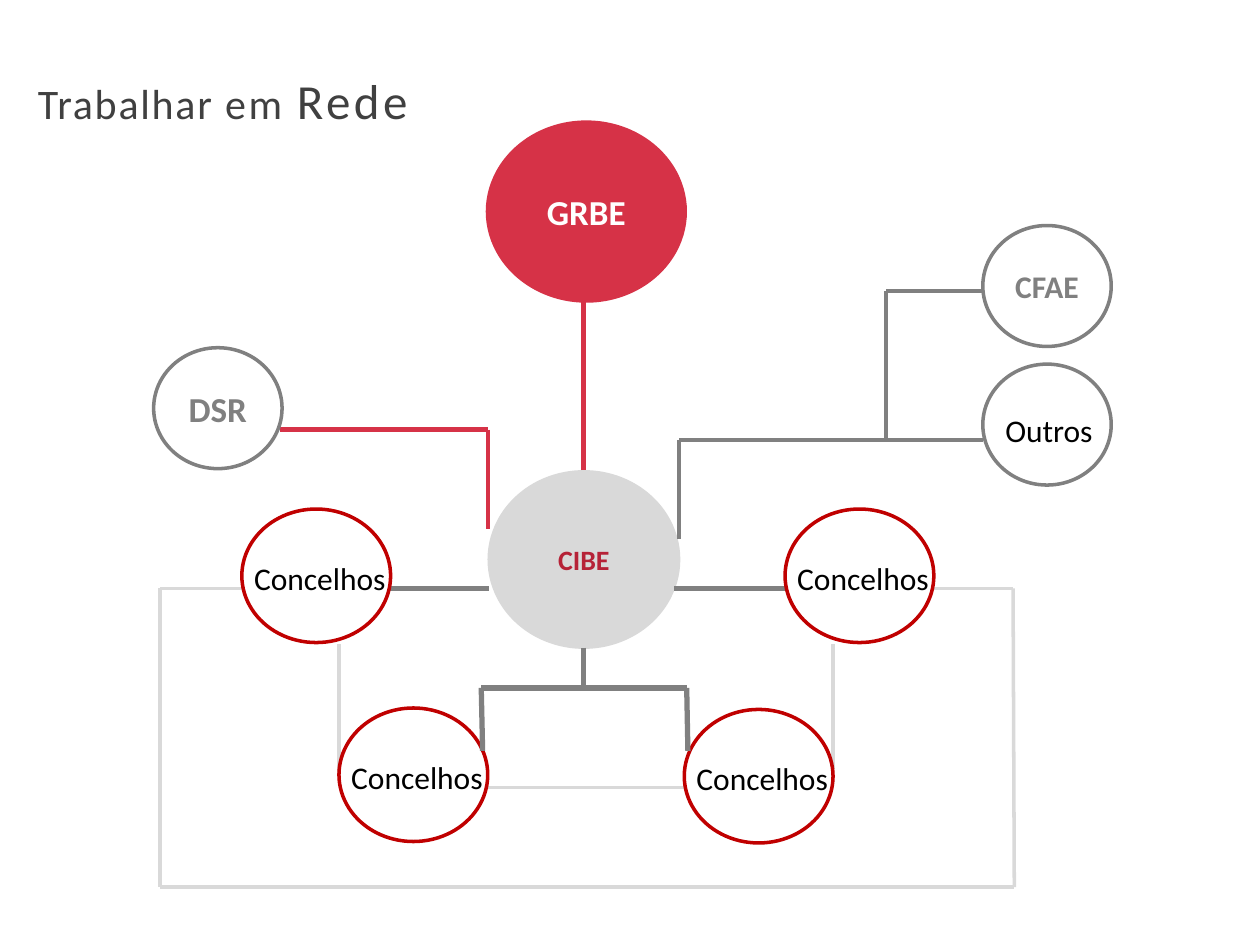
from dataclasses import dataclass
from itertools import pairwise
from typing import Optional

from lxml.etree import SubElement
from pptx import Presentation
from pptx.dml.color import RGBColor
from pptx.enum.shapes import MSO_CONNECTOR, MSO_SHAPE
from pptx.enum.text import MSO_ANCHOR, PP_ALIGN
from pptx.oxml.ns import qn
from pptx.util import Pt

COLORS = {
    "red": "D63247", "dark_red": "B62237", "ring_red": "C00000",
    "gray": "808080", "light": "D9D9D9", "title": "404040",
    "black": "000000", "white": "FFFFFF",
}
FONT = "Calibri"
SMALL = (73.4, 69.1)
COUNCIL = (85, 76.3)


@dataclass(frozen=True)
class Node:
    text: str
    left: float
    top: float
    size: tuple[float, float]
    text_color: str
    text_size: float
    fill: Optional[str] = None
    ring: Optional[str] = None


@dataclass(frozen=True)
class LabeledNode:
    """A ring whose caption is a separate text box, offset from the ring."""
    ring: Node
    offset: tuple[float, float]
    label_width: float


@dataclass(frozen=True)
class Wire:
    color: str
    width: float
    points: tuple[tuple[float, float], ...]


def council(left: float, top: float) -> LabeledNode:
    ring = Node("Concelhos", left, top, COUNCIL, "black", 18, ring="ring_red")
    return LabeledNode(ring, (-5.8, 25), 100.8)


HUBS = (
    Node("CIBE", 278.6, 268.6, (110.2, 102.2), "dark_red", 16, fill="light"),
    Node("GRBE", 278.6, 69.8, (113, 102.2), "white", 20, fill="red", ring="red"),
)
PARTNERS = (
    Node("CFAE", 561.6, 128.9, SMALL, "gray", 18, ring="gray"),
    Node("DSR", 87.8, 198.7, SMALL, "gray", 20, ring="gray"),
)
LABELED_NODES = (
    council(193.7, 404.6),
    council(391, 405.4),
    council(448.6, 290.9),
    council(138.2, 290.9),
    LabeledNode(Node("Outros", 561.6, 208.1, SMALL, "black", 18, ring="gray"),
                (0, 23), 75.6),
)
BACK_WIRES = (
    Wire("gray", 3, ((333.4, 370.1), (333.4, 393.1))),
    Wire("light", 2, ((391, 450), (277.2, 450))),
    Wire("light", 2, ((475.9, 439.2), (475.9, 367.9))),
    Wire("light", 2, ((193.7, 442.8), (193.7, 367.9))),
    Wire("gray", 3, ((279.4, 336.2), (221.8, 336.2))),
    Wire("gray", 3, ((385.2, 336.2), (448.6, 336.2))),
    Wire("red", 3, ((333.4, 268.6), (333.4, 172.1))),
    Wire("light", 2, ((138.2, 336.2), (91.4, 336.2), (91.4, 506.9),
                      (579.6, 506.9), (578.9, 336.2), (533.5, 336.2))),
    Wire("red", 2.5, ((159.8, 245.5), (279, 245.5), (279, 302.4))),
)
FRONT_WIRES = (
    Wire("gray", 2.5, ((561.6, 251.3), (388.1, 251.3), (388.1, 308.2))),
    Wire("gray", 2.5, ((561.6, 166.3), (506.2, 166.3), (506.2, 251.3))),
    Wire("gray", 3, ((275.8, 429.1), (275, 393.1), (392.4, 393.1), (393.1, 429.1))),
)


def rgb(name: str) -> RGBColor:
    return RGBColor.from_string(COLORS[name])


def style_run(run, size: float, color: str, bold: bool = False) -> None:
    run.font.name = FONT
    run.font.size = Pt(size)
    run.font.bold = bold
    run.font.color.rgb = rgb(color)


def write_centered(shape, node: Node, bold: bool) -> None:
    frame = shape.text_frame
    frame.text = node.text
    frame.word_wrap = True
    paragraph = frame.paragraphs[0]
    paragraph.alignment = PP_ALIGN.CENTER
    style_run(paragraph.runs[0], node.text_size, node.text_color, bold)


def draw_ellipse(shapes, node: Node):
    ellipse = shapes.add_shape(MSO_SHAPE.OVAL, Pt(node.left), Pt(node.top),
                               *map(Pt, node.size))
    ellipse.shadow.inherit = False
    if node.fill:
        ellipse.fill.solid()
        ellipse.fill.fore_color.rgb = rgb(node.fill)
    else:
        ellipse.fill.background()
    if node.ring:
        ellipse.line.color.rgb = rgb(node.ring)
        ellipse.line.width = Pt(2)
    else:
        ellipse.line.fill.background()
    return ellipse


def draw_node(shapes, node: Node) -> None:
    ellipse = draw_ellipse(shapes, node)
    ellipse.text_frame.vertical_anchor = MSO_ANCHOR.MIDDLE
    write_centered(ellipse, node, bold=True)


def draw_labeled_node(shapes, item: LabeledNode) -> None:
    group = shapes.add_group_shape()
    draw_ellipse(group.shapes, item.ring)
    dx, dy = item.offset
    label = group.shapes.add_textbox(Pt(item.ring.left + dx), Pt(item.ring.top + dy),
                                     Pt(item.label_width), Pt(28.8))
    write_centered(label, item.ring, bold=False)


def draw_wire(shapes, wire: Wire) -> None:
    for start, end in pairwise(wire.points):
        line = shapes.add_connector(MSO_CONNECTOR.STRAIGHT,
                                    *map(Pt, start), *map(Pt, end))
        line.line.color.rgb = rgb(wire.color)
        line.line.width = Pt(wire.width)
        SubElement(line._element.spPr, qn("a:effectLst"))


def write_title(title) -> None:
    title.left, title.top, title.width, title.height = map(Pt, (14.4, 31.7, 648, 51.1))
    frame = title.text_frame
    frame.vertical_anchor = MSO_ANCHOR.MIDDLE
    paragraph = frame.paragraphs[0]
    paragraph.alignment = PP_ALIGN.LEFT
    for text, size, spacing in (("Trabalhar ", 24, 100), ("em ", 24, 150),
                                ("Rede", 28, 200)):
        run = paragraph.add_run()
        run.text = text
        style_run(run, size, "title")
        run.font._element.set("spc", str(spacing))


def main() -> None:
    deck = Presentation()
    deck.slide_width, deck.slide_height = Pt(720), Pt(540)
    slide = deck.slides.add_slide(deck.slide_layouts[5])
    shapes = slide.shapes
    write_title(shapes.title)
    for hub in HUBS:
        draw_node(shapes, hub)
    for wire in BACK_WIRES:
        draw_wire(shapes, wire)
    for partner in PARTNERS:
        draw_node(shapes, partner)
    for item in LABELED_NODES:
        draw_labeled_node(shapes, item)
    for wire in FRONT_WIRES:
        draw_wire(shapes, wire)
    deck.save("out.pptx")


if __name__ == "__main__":
    main()
